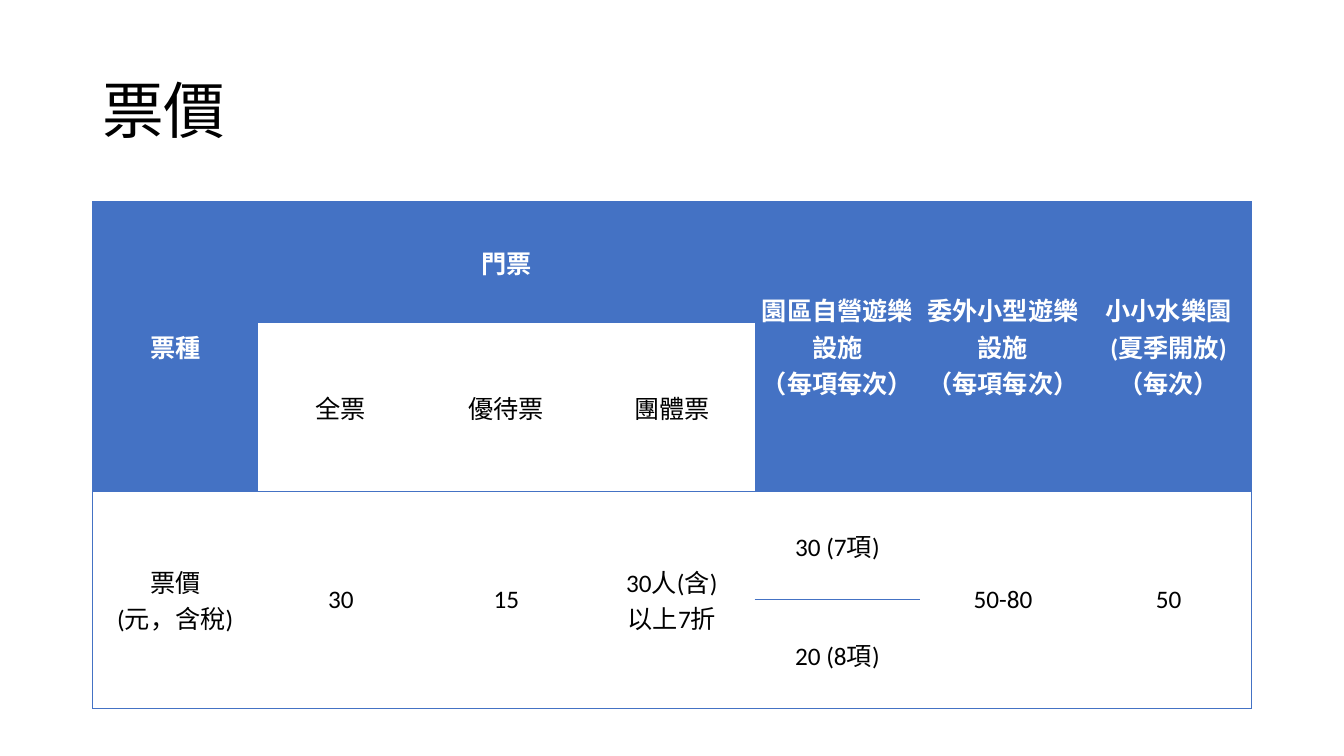
import pptx
import pptx.util
import pptx.dml.color
import pptx.enum.text
import pptx.oxml
from lxml import etree
from pptx.util import Cm

COLORS = {"blue": "4472C4", "white": "FFFFFF", "black": "000000"}
FONT = "Calibri"
NO_STYLE = "{2D5ABB26-0587-4C30-8999-92F81FD0307C}"
MIDDLE = pptx.enum.text.MSO_ANCHOR.MIDDLE
CENTER = pptx.enum.text.PP_ALIGN.CENTER

ROW_HEIGHTS = [3.07, 4.22, 2.74, 2.74]
COLUMNS = 7
# (row, column, row span, column span, text)
PRICES = [
    (0, 0, 2, 1, "票種"),
    (0, 1, 1, 3, "門票"),
    (0, 4, 2, 1, "園區自營遊樂設施\n（每項每次）"),
    (0, 5, 2, 1, "委外小型遊樂設施\n（每項每次）"),
    (0, 6, 2, 1, "小小水樂園\n(夏季開放)\n（每次）"),
    (1, 1, 1, 1, "全票"),
    (1, 2, 1, 1, "優待票"),
    (1, 3, 1, 1, "團體票"),
    (2, 0, 2, 1, "票價\n(元，含稅)"),
    (2, 1, 2, 1, "30"),
    (2, 2, 2, 1, "15"),
    (2, 3, 2, 1, "30人(含)\n以上7折"),
    (2, 4, 1, 1, "30 (7項)"),
    (3, 4, 1, 1, "20 (8項)"),
    (2, 5, 2, 1, "50-80"),
    (2, 6, 2, 1, "50"),
]


def rgb(name):
    return pptx.dml.color.RGBColor.from_string(COLORS[name])


def style_font(p, size, color, bold=False):
    p.font.name = FONT
    p.font.size = pptx.util.Pt(size)
    p.font.bold = bold
    p.font.color.rgb = rgb(color)


def add_title(s, left, top, width, height, text):
    tf = s.shapes.add_textbox(left, top, width, height).text_frame
    tf.word_wrap = True
    tf.vertical_anchor = MIDDLE
    p = tf.paragraphs[0]
    p.text = text
    p.line_spacing = 0.9
    style_font(p, 44, "black")


def set_borders(cell, drawn):
    """Draw the sides listed in drawn and leave the others open."""
    tc_pr = cell._tc.get_or_add_tcPr()
    for side in "LRTB":
        ln = etree.SubElement(tc_pr, pptx.oxml.ns.qn("a:ln" + side), w="6350")
        if side in drawn:
            fill = etree.SubElement(ln, pptx.oxml.ns.qn("a:solidFill"))
            etree.SubElement(fill, pptx.oxml.ns.qn("a:srgbClr"), val=COLORS["blue"])
        else:
            etree.SubElement(ln, pptx.oxml.ns.qn("a:noFill"))


def outer_sides(row, column, last_row, last_column):
    """Table frame, the line under the headings and the split price cell."""
    rules = {
        "L": column == 0,
        "R": last_column == COLUMNS - 1,
        "T": row in (0, 2) or row == last_row == 3 and column == 4,
        "B": last_row in (1, 3) or row == last_row == 2 and column == 4,
    }
    return [side for side, drawn in rules.items() if drawn]


def fill_cell(cell, text, heading):
    cell.vertical_anchor = MIDDLE
    cell.margin_left = cell.margin_right = Cm(0.08)
    cell.margin_top = cell.margin_bottom = Cm(0.08)
    cell.fill.solid()
    cell.fill.fore_color.rgb = rgb("blue" if heading else "white")
    p = cell.text_frame.paragraphs[0]
    p.text = text.replace("\n", "\v")
    p.alignment = CENTER
    style_font(p, 18, "white" if heading else "black", heading)


def add_price_table(s, left, top, width, height):
    table = s.shapes.add_table(len(ROW_HEIGHTS), COLUMNS, left, top, width, height).table
    table._tbl.tblPr.find(pptx.oxml.ns.qn("a:tableStyleId")).text = NO_STYLE
    for column in table.columns:
        column.width = width // COLUMNS
    for row, row_height in zip(table.rows, ROW_HEIGHTS):
        row.height = Cm(row_height)

    for row, column, row_span, column_span, text in PRICES:
        cell = table.cell(row, column)
        last_row, last_column = row + row_span - 1, column + column_span - 1
        if row_span * column_span > 1:
            cell.merge(table.cell(last_row, last_column))
        # Covered cells carry their own part of the frame
        for r in range(row, last_row + 1):
            for c in range(column, last_column + 1):
                if (r, c) != (row, column):
                    sides = outer_sides(r, c, r, c)
                    if r < last_row:
                        sides = [side for side in sides if side != "B"]
                    set_borders(table.cell(r, c), sides)
        set_borders(cell, outer_sides(row, column, last_row, last_column))
        # Top-row cells are the headings
        fill_cell(cell, text, heading=row == 0)


def main():
    prs = pptx.Presentation()
    prs.slide_width, prs.slide_height = Cm(33.87), Cm(19.05)
    s = prs.slides.add_slide(prs.slide_layouts[6])
    left, width = Cm(2.33), Cm(29.21)
    add_title(s, left, Cm(1.01), width, Cm(3.68), "票價")
    add_price_table(s, left, Cm(5.08), width, Cm(sum(ROW_HEIGHTS)))
    prs.save("out.pptx")


if __name__ == "__main__":
    main()
